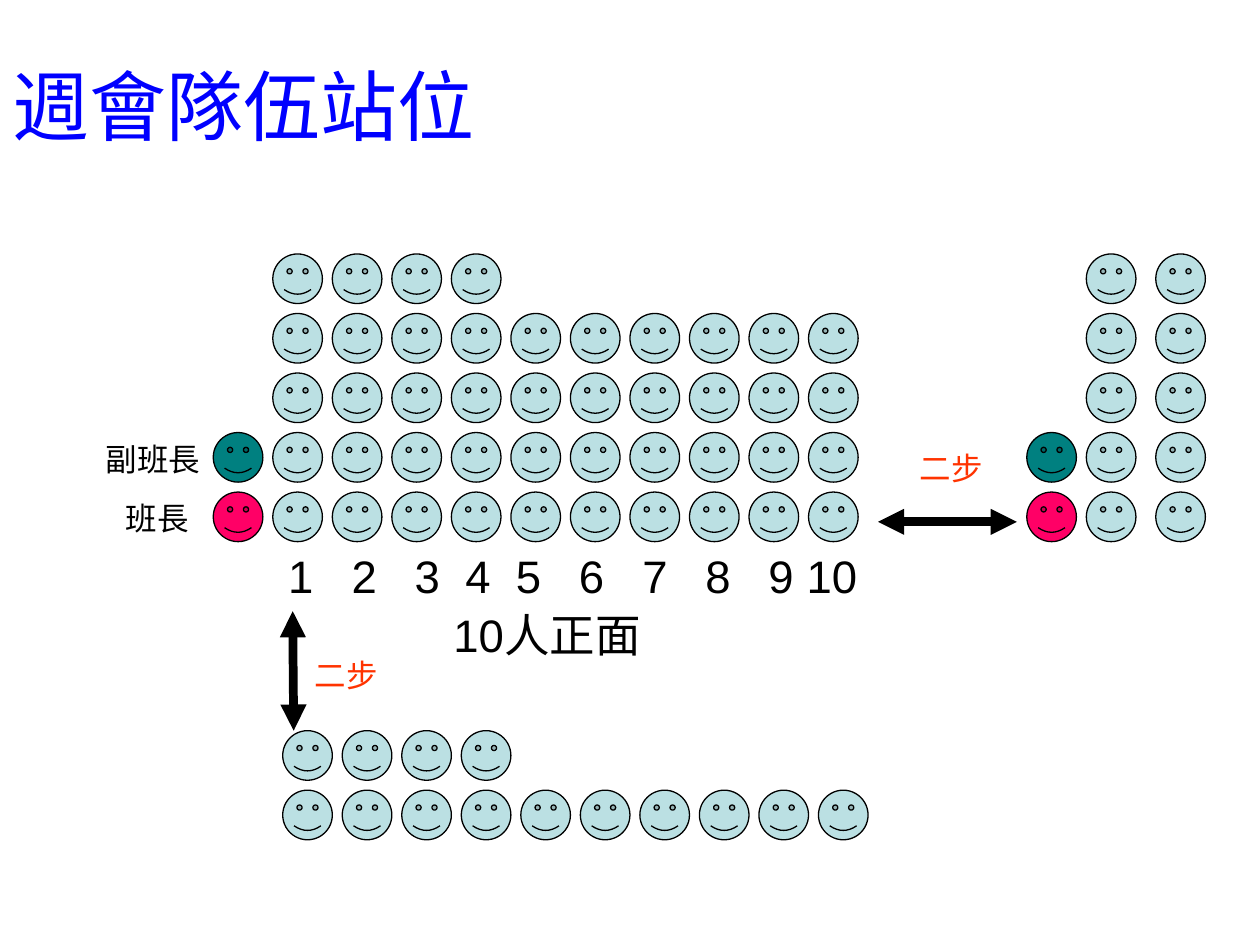
import pptx
import pptx.util
import pptx.dml.color
import pptx.enum.shapes
import pptx.enum.text
import pptx.oxml.ns
from lxml import etree

Cm, Pt = pptx.util.Cm, pptx.util.Pt
RGBColor = pptx.dml.color.RGBColor

BLUE = RGBColor(0x00, 0x00, 0xFF)
BLACK = RGBColor(0x00, 0x00, 0x00)
ORANGE = RGBColor(0xFF, 0x33, 0x00)
MEMBER = RGBColor(0xBB, 0xE0, 0xE3)
LEADER = RGBColor(0xFF, 0x00, 0x66)
DEPUTY = RGBColor(0x00, 0x80, 0x80)

FACE = 1.0
PITCH = 1.2
FRONT_Y = 9.92
NUMBER_STOPS = [0.25, 1.53, 2.8, 3.82, 4.84, 6.11, 7.39, 8.66, 9.93, 10.7]


def add_run(p, text, size, color):
    r = p.add_run()
    r.text = text
    r.font.name = "Arial"
    r.font.size = Pt(size)
    r.font.color.rgb = color


def add_title(s, text):
    title = s.shapes.title
    title.left, title.top, title.width, title.height = Cm(0), Cm(0.53), Cm(22.86), Cm(3.18)
    title.text_frame.vertical_anchor = pptx.enum.text.MSO_ANCHOR.MIDDLE
    p = title.text_frame.paragraphs[0]
    p.alignment = pptx.enum.text.PP_ALIGN.LEFT
    add_run(p, text, 44, BLUE)


def add_label(s, text, x, y, w, h, size=18, color=BLACK, wrap=False, stops=()):
    """Add a text box; stops are left tab positions in centimetres."""
    tf = s.shapes.add_textbox(Cm(x), Cm(y), Cm(w), Cm(h)).text_frame
    tf.word_wrap = wrap
    tf.auto_size = pptx.enum.text.MSO_AUTO_SIZE.SHAPE_TO_FIT_TEXT
    p = tf.paragraphs[0]
    if stops:
        tabs = etree.SubElement(p._p.get_or_add_pPr(), pptx.oxml.ns.qn("a:tabLst"))
        for stop in stops:
            etree.SubElement(tabs, pptx.oxml.ns.qn("a:tab"), pos=str(Cm(stop)), algn="l")
    add_run(p, text, size, color)


def add_face(s, x, y, color):
    sp = s.shapes.add_shape(pptx.enum.shapes.MSO_SHAPE.SMILEY_FACE,
                            Cm(x), Cm(y), Cm(FACE), Cm(FACE))
    sp.shadow.inherit = False
    sp.fill.solid()
    sp.fill.fore_color.rgb = color
    sp.line.color.rgb = BLACK
    sp.line.width = Pt(0.75)


def add_ranks(s, x, y, counts):
    """Add rows of members from the front rank at y upwards."""
    for row, count in enumerate(counts):
        for col in range(count):
            add_face(s, x + col * PITCH, y - row * PITCH, MEMBER)


def add_leaders(s, x, y):
    add_face(s, x, y, LEADER)
    add_face(s, x, y - PITCH, DEPUTY)


def add_double_arrow(s, x1, y1, x2, y2):
    line = s.shapes.add_connector(pptx.enum.shapes.MSO_CONNECTOR.STRAIGHT,
                                  Cm(x1), Cm(y1), Cm(x2), Cm(y2))
    line.line.color.rgb = BLACK
    line.line.width = Pt(5)
    ln = line.line._get_or_add_ln()
    for end in ("a:headEnd", "a:tailEnd"):
        etree.SubElement(ln, pptx.oxml.ns.qn(end), type="triangle")
    etree.SubElement(line._element.spPr, pptx.oxml.ns.qn("a:effectLst"))


def main():
    prs = pptx.Presentation()
    prs.slide_width, prs.slide_height = Cm(25.4), Cm(19.05)
    s = prs.slides.add_slide(prs.slide_layouts[5])
    add_title(s, "週會隊伍站位")

    add_ranks(s, 5.5, FRONT_Y, [10, 10, 10, 10, 4])
    add_leaders(s, 4.3, FRONT_Y)
    add_label(s, "班長", 2.29, 9.93, 1.78, 1.02)
    add_label(s, "副班長", 1.88, 8.74, 2.41, 1.02)

    add_ranks(s, 21.9, FRONT_Y, [1] * 5)
    add_leaders(s, 20.7, FRONT_Y)
    add_ranks(s, 23.3, FRONT_Y, [1] * 5)
    add_ranks(s, 5.7, 15.93, [10, 4])

    add_double_arrow(s, 17.7, 10.52, 20.5, 10.52)
    add_label(s, "二步", 18.29, 8.92, 1.78, 1.02, color=ORANGE)
    add_double_arrow(s, 5.9, 12.32, 5.92, 14.73)
    add_label(s, "二步", 6.1, 13.11, 1.8, 1.02, color=ORANGE)

    add_label(s, "10人正面", 8.89, 12.12, 6.4, 1.35, size=26, wrap=True)
    numbers = "".join(f"\t{n}" for n in range(1, 11))
    add_label(s, numbers, 5.31, 10.92, 13.59, 1.37, size=26, wrap=True, stops=NUMBER_STOPS)

    prs.save("out.pptx")


if __name__ == "__main__":
    main()
